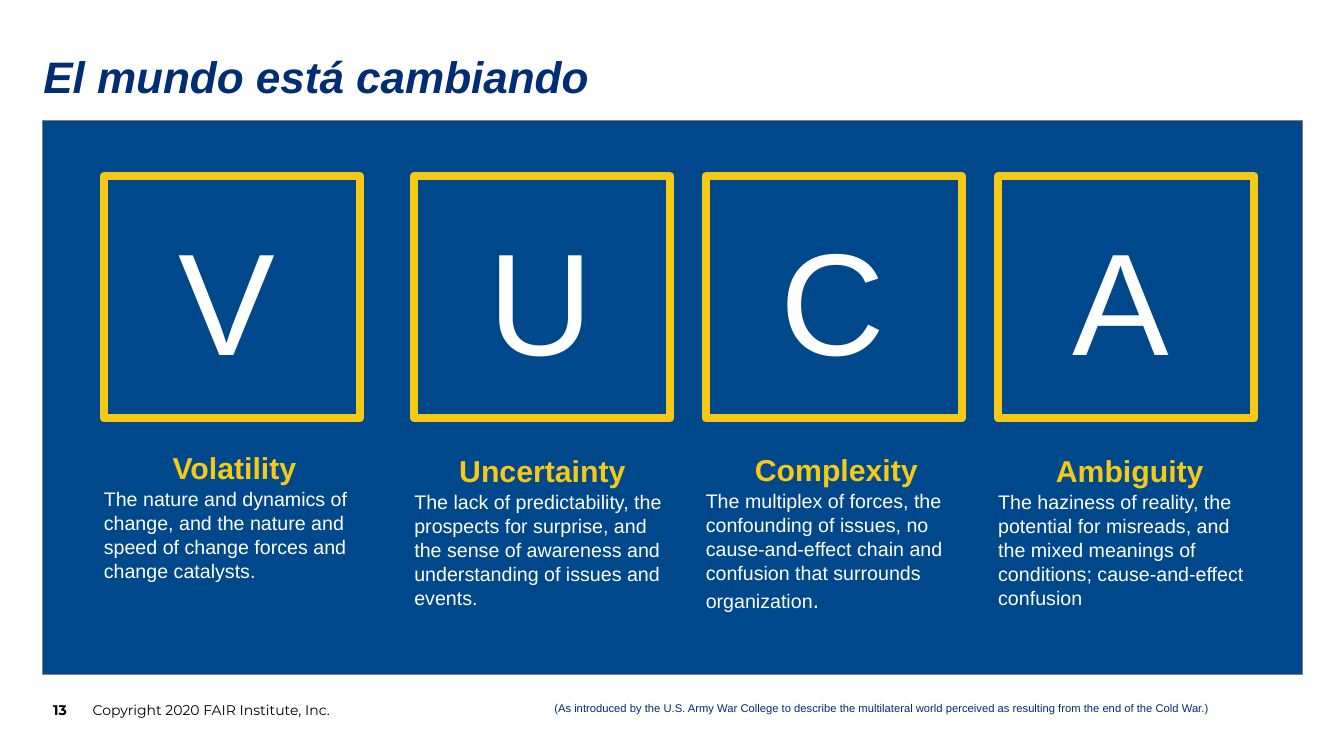
from pptx import Presentation, util as u
from pptx.dml.color import RGBColor
from pptx.enum import shapes, text
from pptx.oxml.ns import qn

NAVY = RGBColor(0x00, 0x2D, 0x74)
BLUE = RGBColor(0x00, 0x48, 0x8C)
GOLD = RGBColor(0xF6, 0xC9, 0x17)
GRAY = RGBColor(0x80, 0x80, 0x80)
WHITE = RGBColor(0xFF, 0xFF, 0xFF)
BLACK = RGBColor(0x00, 0x00, 0x00)

CELL = u.Inches(0.01)  # the slide is a grid of square cells
COLS, ROWS = 1333, 750
TILE_W, TILE_H = 254, 240

# word, meaning, column of the tile, row and width of the caption
TERMS = [
    ("Volatility",
     "The nature and dynamics of change, and the nature and speed of "
     "change forces and change catalysts.", 61, 326, 259),
    ("Uncertainty",
     "The lack of predictability, the prospects for surprise, and the sense "
     "of awareness and understanding of issues and events.", 369, 329, 254),
    ("Complexity",
     "The multiplex of forces, the confounding of issues, no cause-and-effect "
     "chain and confusion that surrounds organization.", 658, 328, 259),
    ("Ambiguity",
     "The haziness of reality, the potential for misreads, and the mixed "
     "meanings of conditions; cause-and-effect confusion", 948, 329, 261),
]


def span(*cells):
    return [n * CELL for n in cells]


def place(item, box):
    item.left, item.top, item.width, item.height = span(*box)


def trim(frame, top=0):
    """Clear the insets, but for the top one."""
    frame.margin_left = frame.margin_right = frame.margin_bottom = 0
    frame.margin_top = top * CELL
    frame.word_wrap = True


def style(par, size, color, bold=False, face="Arial"):
    font = par.font
    font.name, font.size, font.bold = face, u.Pt(size), bold
    font.color.rgb = color


def block(slide, box, edge, width):
    rect = slide.shapes.add_shape(shapes.MSO_SHAPE.RECTANGLE, *span(*box))
    rect.shadow.inherit = False
    rect.fill.solid()
    rect.fill.fore_color.rgb = BLUE
    rect.line.color.rgb = edge
    rect.line.width = u.Pt(width)


def label(slide, box, words, size, color, **look):
    frame = slide.shapes.add_textbox(*span(*box)).text_frame
    frame.word_wrap = True
    frame.text = words
    style(frame.paragraphs[0], size, color, **look)
    return frame


def head(slide, box):
    title = slide.shapes.title
    place(title, box)
    frame = title.text_frame
    trim(frame, 5)
    frame.vertical_anchor = text.MSO_ANCHOR.TOP
    frame.text = "El mundo está cambiando"
    par = frame.paragraphs[0]
    par.alignment = text.PP_ALIGN.LEFT
    style(par, 31.5, NAVY, bold=True)
    par.font.italic = True


def term(slide, x, y, word, gist, drop, width):
    """One tile with its initial, and the caption below it."""
    block(slide, (x, y, TILE_W, TILE_H), GOLD, 5.75)
    label(slide, (x + 64, y + 29, 148, 184), word[0], 103.5, WHITE)
    frame = label(slide, (x, drop, width, 129), word, 21.6, GOLD, bold=True)
    trim(frame)
    frame.paragraphs[0].alignment = text.PP_ALIGN.CENTER
    par = frame.add_paragraph()
    par.line_spacing = 1.03
    if gist.endswith("organization."):
        par.add_run().text = gist[:-1]
        dot = par.add_run()
        dot.text = "."
        dot.font.size = u.Pt(16.2)
    else:
        par.text = gist
    style(par, 14, WHITE)


def panel(slide, box):
    left, top = box[:2]
    block(slide, box, GRAY, 0.75)
    for word, gist, col, row, width in TERMS:
        term(slide, left + col, top + 55, word, gist, top + row, width)


def foot(slide, box):
    left, top, _, high = box
    for col, width, words, bold in (
            (39, 856, "Copyright 2020 FAIR Institute, Inc.", False),
            (0, 54, "13", True)):
        frame = label(slide, (left + col, top, width, high), words, 10, BLACK,
                      bold=bold, face="Montserrat")
        frame.vertical_anchor = text.MSO_ANCHOR.MIDDLE
    note = slide.placeholders[1]
    place(note, (left + 393, top + 12, 764, 32))
    frame = note.text_frame
    trim(frame)
    frame.text = ("(As introduced by the U.S. Army War College to describe the "
                  "multilateral world perceived as resulting from the end of "
                  "the Cold War.)")
    par = frame.paragraphs[0]
    props = par._p.get_or_add_pPr()
    props.set("marL", "0")
    props.set("indent", "0")
    props.append(props.makeelement(qn("a:buNone"), {}))
    par.alignment = text.PP_ALIGN.RIGHT
    par.space_before = u.Pt(0)
    style(par, 8, NAVY)


def main():
    deck = Presentation()
    deck.slide_width, deck.slide_height = span(COLS, ROWS)
    slide = deck.slides.add_slide(deck.slide_layouts[1])
    head(slide, (43, 44, 1086, 76))
    panel(slide, (42, 120, 1250, 549))
    foot(slide, (43, 684, 1157, 40))
    deck.save("out.pptx")


if __name__ == "__main__":
    main()
